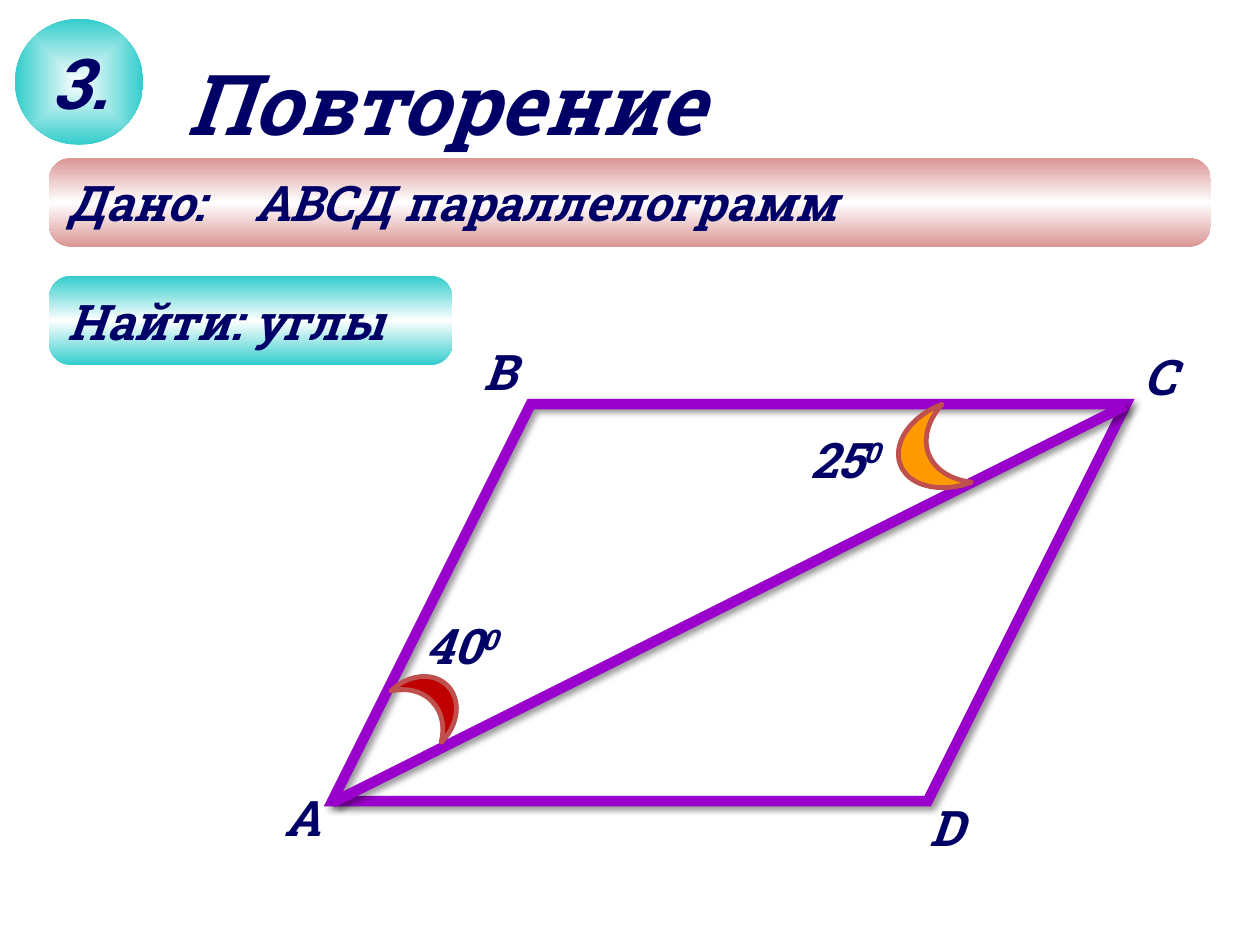
"""Build the geometry revision slide about the angles of a parallelogram."""
from dataclasses import dataclass

from lxml.etree import SubElement
from pptx import Presentation
from pptx.dml.color import RGBColor
from pptx.enum.shapes import MSO_CONNECTOR, MSO_SHAPE
from pptx.enum.text import MSO_ANCHOR, MSO_AUTO_SIZE, PP_ALIGN
from pptx.oxml import parse_xml
from pptx.oxml.ns import nsdecls, qn
from pptx.util import Cm, Pt

FONT = "Roboto Slab"
NAVY, PURPLE, TEAL, ROSE, WHITE = "000066", "9900CC", "33CCCC", "D99694", "FFFFFF"
LINEAR = '<a:lin ang="5400000" scaled="0"/>'
RADIAL = '<a:path path="shape"><a:fillToRect l="50000" t="50000" r="50000" b="50000"/></a:path>'


@dataclass
class Box:
    left: float
    top: float
    width: float
    height: float

    def emu(self) -> tuple:
        return tuple(Cm(v) for v in (self.left, self.top, self.width, self.height))


@dataclass
class Label:
    text: str
    box: Box
    power: str = ""
    size: int = 28


@dataclass
class Banner:
    text: str
    box: Box
    color: str


@dataclass
class Moon:
    box: Box
    rotation: float
    color: str


LABELS = [
    Label("А", Box(5.49, 15.75, 1.17, 1.45)),
    Label("B", Box(9.5, 6.76, 1.17, 1.45)),
    Label("C", Box(22.81, 6.86, 1.17, 1.45)),
    Label("D", Box(18.49, 15.95, 1.17, 1.45)),
    Label("40", Box(8.33, 12.29, 2.31, 1.45), "0"),
    Label("25", Box(16.08, 8.53, 2.31, 1.45), "0"),
]
BANNERS = [
    Banner("Дано:\tАВСД параллелограмм", Box(0.99, 3.18, 23.42, 1.8), ROSE),
    Banner("Найти: углы", Box(0.99, 5.56, 8.13, 1.8), TEAL),
]
MOONS = [
    Moon(Box(8.26, 13.41, 0.89, 1.45), 135.6, "C00000"),
    Moon(Box(18.11, 8.31, 1.22, 1.68), 339.3, "FF9900"),
]


def rgb(color: str) -> RGBColor:
    return RGBColor.from_string(color)


def style_text(tf, size: int) -> None:
    for p in tf.paragraphs:
        for r in p.runs:
            r.font.name = FONT
            r.font.size = Pt(size)
            r.font.bold = r.font.italic = True
            r.font.color.rgb = rgb(NAVY)


def set_line(line, color: str, width: float) -> None:
    line.color.rgb = rgb(color)
    line.width = Pt(width)


def draw_shape(s, kind, box: Box):
    sp = s.shapes.add_shape(kind, *box.emu())
    sp.shadow.inherit = False
    return sp


def add_shadow(sp) -> None:
    props = sp._element.spPr
    for old in props.findall(qn("a:effectLst")):
        props.remove(old)
    props.append(parse_xml(
        f'<a:effectLst {nsdecls("a")}><a:outerShdw blurRad="{Pt(4)}" dist="{Pt(3)}" '
        'dir="2700000" algn="tl" rotWithShape="0"><a:srgbClr val="000000">'
        '<a:alpha val="40000"/></a:srgbClr></a:outerShdw></a:effectLst>'))


def set_gradient(sp, colors: list[str], direction: str) -> None:
    step = 100000 // (len(colors) - 1)
    stops = "".join(f'<a:gs pos="{i * step}"><a:srgbClr val="{c}"/></a:gs>'
                    for i, c in enumerate(colors))
    sp._element.spPr.find(qn("a:prstGeom")).addnext(parse_xml(
        f'<a:gradFill {nsdecls("a")} rotWithShape="1"><a:gsLst>{stops}</a:gsLst>'
        f'{direction}</a:gradFill>'))
    sp.line.fill.background()


def draw_parallelogram(s) -> None:
    sp = draw_shape(s, MSO_SHAPE.PARALLELOGRAM, Box(6.7, 8.15, 16, 8))
    sp.adjustments[0] = 0.5
    sp.fill.background()
    diagonal = s.shapes.add_connector(
        MSO_CONNECTOR.STRAIGHT, Cm(22.68), Cm(8.18), Cm(6.7), Cm(16.18))
    for side in (sp, diagonal):
        set_line(side.line, PURPLE, 6)
        SubElement(side._element.spPr.find(qn("a:ln")), qn("a:miter"), lim="800000")
        add_shadow(side)


def draw_label(s, label: Label):
    sp = s.shapes.add_textbox(*label.box.emu())
    tf = sp.text_frame
    tf.text = label.text
    tf.word_wrap = True
    tf.auto_size = MSO_AUTO_SIZE.SHAPE_TO_FIT_TEXT
    if label.power:
        r = tf.paragraphs[0].add_run()
        r.text = label.power
        r._r.get_or_add_rPr().set("baseline", "30000")
    style_text(tf, label.size)
    return sp


def draw_moon(s, moon: Moon) -> None:
    sp = draw_shape(s, MSO_SHAPE.MOON, moon.box)
    sp.rotation = moon.rotation
    sp.fill.solid()
    sp.fill.fore_color.rgb = rgb(moon.color)
    set_line(sp.line, "C0504D", 2.75)


def draw_banner(s, banner: Banner) -> None:
    sp = draw_shape(s, MSO_SHAPE.ROUNDED_RECTANGLE, banner.box)
    sp.adjustments[0] = 0.25
    set_gradient(sp, [banner.color, WHITE, banner.color], LINEAR)
    tf = sp.text_frame
    tf.text = banner.text
    tf.word_wrap = True
    tf.vertical_anchor = MSO_ANCHOR.MIDDLE
    p = tf.paragraphs[0]
    p.alignment = PP_ALIGN.LEFT
    tabs = SubElement(p._p.get_or_add_pPr(), qn("a:tabLst"))
    SubElement(tabs, qn("a:tab"), pos=str(Cm(3.76)), algn="l")
    style_text(tf, 28)


def draw_number(s) -> None:
    sp = draw_shape(s, MSO_SHAPE.OVAL, Box(0.3, 0.38, 2.59, 2.54))
    set_gradient(sp, [WHITE, TEAL], RADIAL)
    tf = sp.text_frame
    tf.text = "3."
    tf.word_wrap = False
    tf.vertical_anchor = MSO_ANCHOR.MIDDLE
    tf.paragraphs[0].alignment = PP_ALIGN.CENTER
    style_text(tf, 40)


def draw_title(s) -> None:
    sp = draw_label(s, Label("Повторение", Box(3.51, 0.91, 11.99, 2.31), size=48))
    r = sp.text_frame.paragraphs[0].runs[0]
    r._r.get_or_add_rPr().insert(0, parse_xml(
        f'<a:ln {nsdecls("a")} w="{Pt(0.71)}"><a:solidFill>'
        '<a:srgbClr val="5E457C"/></a:solidFill></a:ln>'))


def main() -> None:
    prs = Presentation()
    prs.slide_width, prs.slide_height = Cm(25.4), Cm(19.05)
    s = prs.slides.add_slide(prs.slide_layouts[6])
    draw_parallelogram(s)
    for moon in MOONS:
        draw_moon(s, moon)
    for label in LABELS:
        draw_label(s, label)
    for banner in BANNERS:
        draw_banner(s, banner)
    draw_number(s)
    draw_title(s)
    prs.save("out.pptx")


if __name__ == "__main__":
    main()
